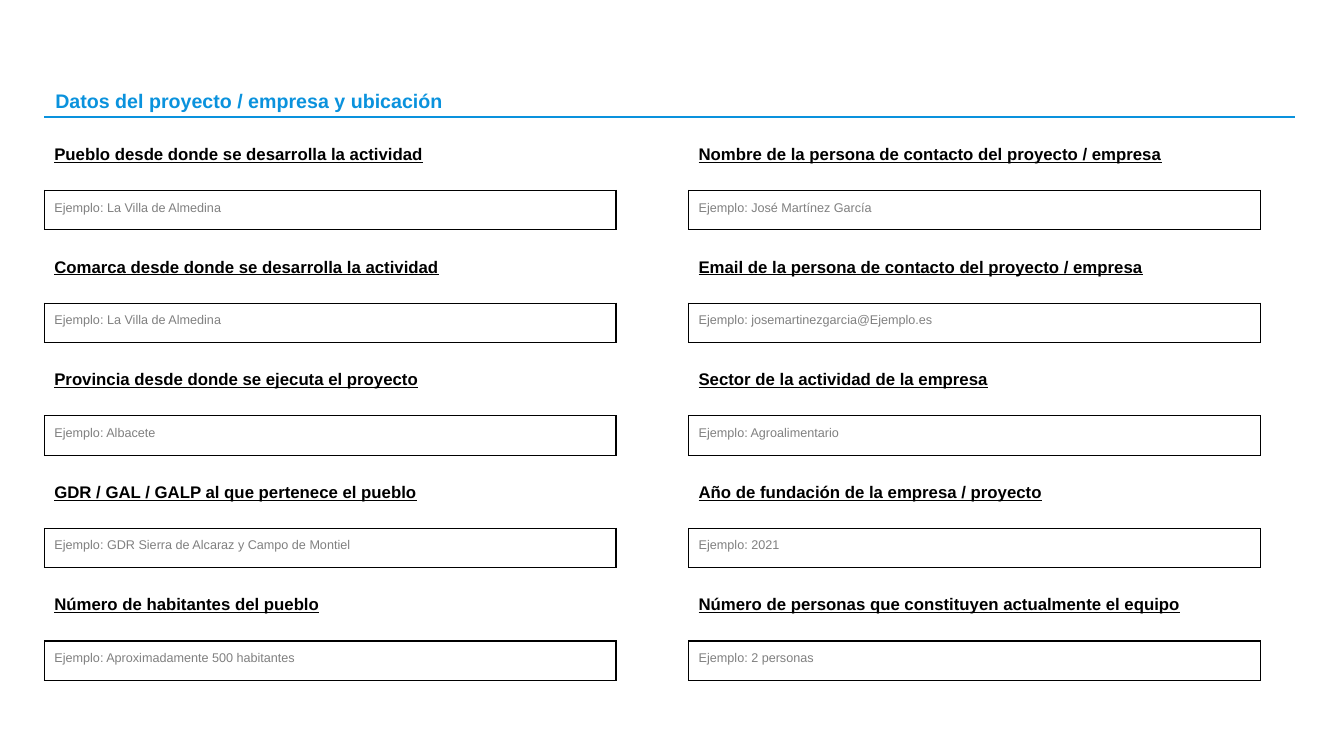
import pptx
import pptx.dml.color
import pptx.enum.shapes
import pptx.enum.text
import pptx.oxml
import pptx.oxml.ns
import pptx.util

Inches = pptx.util.Inches
HUES = {"blue": "0A92DD", "black": "000000", "grey": "808080", "white": "FFFFFF"}

# Form content: (label, example) for each column
LEFT = [
    ("Pueblo desde donde se desarrolla la actividad", "La Villa de Almedina"),
    ("Comarca desde donde se desarrolla la actividad", "La Villa de Almedina"),
    ("Provincia desde donde se ejecuta el proyecto", "Albacete"),
    ("GDR / GAL / GALP al que pertenece el pueblo",
     "GDR Sierra de Alcaraz y Campo de Montiel"),
    ("Número de habitantes del pueblo", "Aproximadamente 500 habitantes"),
]
RIGHT = [
    ("Nombre de la persona de contacto del proyecto / empresa", "José Martínez García"),
    ("Email de la persona de contacto del proyecto / empresa",
     "josemartinezgarcia@Ejemplo.es"),
    ("Sector de la actividad de la empresa", "Agroalimentario"),
    ("Año de fundación de la empresa / proyecto", "2021"),
    ("Número de personas que constituyen actualmente el equipo", "2 personas"),
]


def color(name):
    return pptx.dml.color.RGBColor.from_string(HUES[name])


def write(frame, text, size=12, hue="black", bold=False, line=False):
    run = frame.paragraphs[0].add_run()
    run.text = text
    font = run.font
    font.name = "Arial"
    font.size = pptx.util.Pt(size)
    font.bold = bold
    font.underline = line
    font.color.rgb = color(hue)


class Form:
    def __init__(self, slide):
        self.slide = slide
        self.edge = 1  # border width in points

    def label(self, x, y, w, text, **style):
        box = self.slide.shapes.add_textbox(Inches(x), Inches(y), Inches(w), Inches(0.27))
        frame = box.text_frame
        frame.word_wrap = True
        frame.margin_top = frame.margin_bottom = 0
        frame.vertical_anchor = pptx.enum.text.MSO_ANCHOR.MIDDLE
        write(frame, text, **style)

    def rule(self, x, y, end):
        line = self.slide.shapes.add_connector(
            pptx.enum.shapes.MSO_CONNECTOR.STRAIGHT,
            Inches(x), Inches(y), Inches(end), Inches(y))
        line.line.color.rgb = color("blue")
        line.line.width = pptx.util.Pt(1.5)
        props = line._element.spPr
        props.append(pptx.oxml.parse_xml(
            f'<a:effectLst {pptx.oxml.ns.nsdecls("a")}/>'))

    def field(self, x, y, text):
        table = self.slide.shapes.add_table(
            1, 1, Inches(x), Inches(y), Inches(5.67), Inches(0.39)).table
        table.first_row = table.horz_banding = False
        cell = table.cell(0, 0)
        cell.margin_left = cell.margin_right = Inches(0.1)
        cell.margin_top = cell.margin_bottom = Inches(0.1)
        self.border(cell)
        cell.fill.solid()
        cell.fill.fore_color.rgb = color("white")
        write(cell.text_frame, text, size=9, hue="grey")

    def border(self, cell):
        props = cell._tc.get_or_add_tcPr()
        for side in "LRTB":
            props.append(pptx.oxml.parse_xml(
                f'<a:ln{side} {pptx.oxml.ns.nsdecls("a")} w="{pptx.util.Pt(self.edge)}">'
                f'<a:solidFill><a:srgbClr val="{HUES["black"]}"/></a:solidFill>'
                f'</a:ln{side}>'))


def main():
    deck = pptx.Presentation()
    deck.slide_width, deck.slide_height = Inches(13.33), Inches(7.5)
    form = Form(deck.slides.add_slide(deck.slide_layouts[6]))

    # Heading
    form.label(0.45, 0.86, 4.46, "Datos del proyecto / empresa y ubicación",
               size=14, hue="blue", bold=True)
    form.rule(0.44, 1.16, 12.84)

    # Two columns of labelled fields, evenly spaced
    top, last = 1.39, 5.86
    for x, items in ((0.44, LEFT), (6.83, RIGHT)):
        step = (last - top) / (len(items) - 1)
        for row, (label, sample) in enumerate(items):
            y = top + row * step
            form.label(x, y, 5.65, label, bold=True, line=True)
            form.field(x, y + 0.5, f"Ejemplo: {sample}")

    deck.save("out.pptx")


if __name__ == "__main__":
    main()
